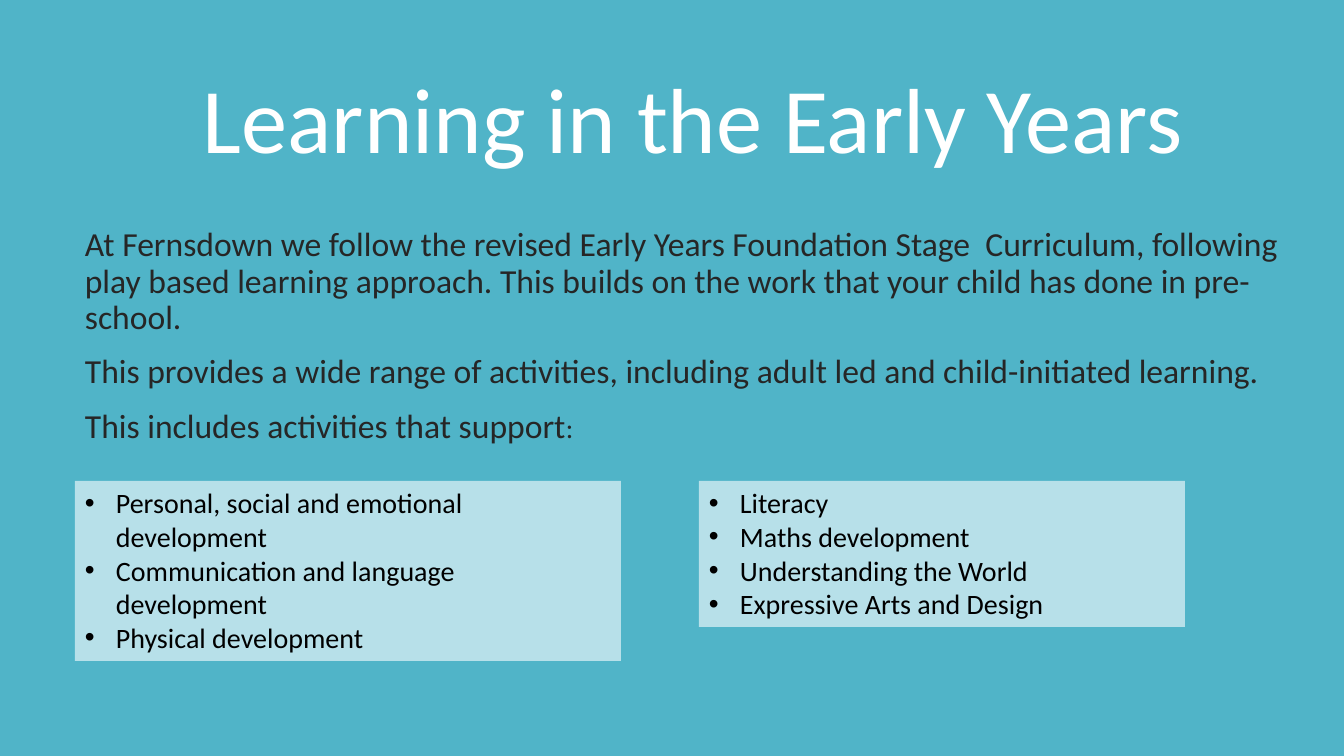
import pptx
import pptx.dml.color
import pptx.enum.shapes
import pptx.enum.text
import pptx.util
import lxml.etree
import pptx.oxml.ns

PX = 12192000 / 1344
INK, WHITE, BLACK = "262626", "FFFFFF", "000000"
TEAL, PALE = "50B4C8", "B7E0E9"


def emu(px):
    return pptx.util.Emu(round(px * PX))


def rgb(value):
    return pptx.dml.color.RGBColor.from_string(value)


class Deck:
    """Holds the style and the current slide."""

    font = "Calibri"
    indent = 31

    def __init__(self):
        self.prs = pptx.Presentation()
        self.prs.slide_width, self.prs.slide_height = emu(1344), emu(756)

    def add_slide(self, color):
        self.s = self.prs.slides.add_slide(self.prs.slide_layouts[6])
        fill = self.s.background.fill
        fill.solid()
        fill.fore_color.rgb = rgb(color)

    def fill_text(self, sp, paragraphs, color, **formats):
        """Each paragraph is a list of (text, size) runs."""
        tf = sp.text_frame
        tf.word_wrap = True
        tf.vertical_anchor = pptx.enum.text.MSO_ANCHOR.TOP
        formats = {"alignment": pptx.enum.text.PP_ALIGN.LEFT, **formats}
        for i, runs in enumerate(paragraphs):
            p = tf.paragraphs[0] if i == 0 else tf.add_paragraph()
            for name, value in formats.items():
                setattr(p, name, value)
            for text, size in runs:
                r = p.add_run()
                r.text = text
                r.font.name = self.font
                r.font.size = pptx.util.Pt(size)
                r.font.color.rgb = rgb(color)
        return tf

    def text(self, box, paragraphs, color, **formats):
        sp = self.s.shapes.add_textbox(*map(emu, box))
        return self.fill_text(sp, paragraphs, color, **formats)

    def bullet_panel(self, box, items, size=20):
        sp = self.s.shapes.add_shape(
            pptx.enum.shapes.MSO_SHAPE.RECTANGLE, *map(emu, box))
        sp.shadow.inherit = False
        sp.fill.solid()
        sp.fill.fore_color.rgb = rgb(PALE)
        sp.line.fill.background()
        tf = self.fill_text(sp, [[(item, size)] for item in items], BLACK)
        for p in tf.paragraphs:
            pPr = p._p.get_or_add_pPr()
            pPr.set("marL", str(emu(self.indent)))
            pPr.set("indent", str(-emu(self.indent)))
            for tag, name, value in (("a:buFont", "typeface", "Arial"),
                                     ("a:buChar", "char", "•")):
                lxml.etree.SubElement(pPr, pptx.oxml.ns.qn(tag)).set(name, value)


def main():
    deck = Deck()
    deck.add_slide(TEAL)

    # Introduction
    deck.text((75, 223, 1223, 192), [
        [("At Fernsdown we follow the revised Early Years Foundation Stage  "
          "Curriculum, following play based learning approach. This builds on "
          "the work that your child has done in pre-school.", 24)],
        [("This provides a wide range of activities, including adult led and "
          "child-initiated learning.", 24)],
        [("This includes activities that support", 24), (":", 20)],
    ], INK, line_spacing=0.9, space_before=pptx.util.Pt(13))

    # Title
    deck.text((193, 56, 1076, 122), [[("Learning in the Early Years", 66)]], WHITE)

    # Areas of learning
    deck.bullet_panel((75, 481, 546, 180), [
        "Personal, social and emotional development",
        "Communication and language development",
        "Physical development",
    ])
    deck.bullet_panel((699, 481, 486, 146), [
        "Literacy",
        "Maths development",
        "Understanding the World",
        "Expressive Arts and Design",
    ])

    deck.prs.save("out.pptx")


if __name__ == "__main__":
    main()
